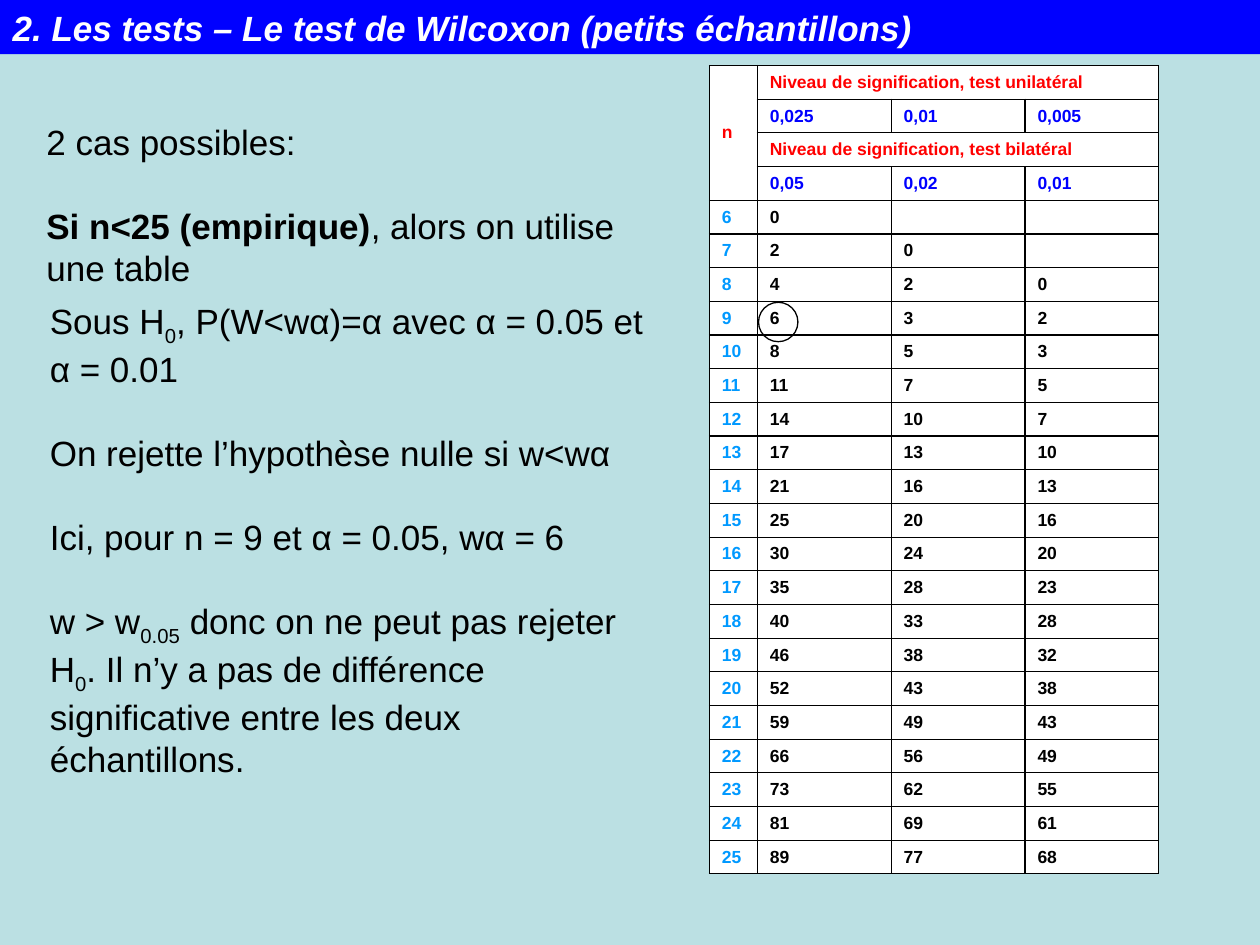
import dataclasses

import lxml.etree
import pptx
import pptx.dml.color
import pptx.enum.shapes
import pptx.enum.text
import pptx.oxml.ns
import pptx.util

Pt = pptx.util.Pt
RGB = pptx.dml.color.RGBColor.from_string
MIDDLE = pptx.enum.text.MSO_ANCHOR.MIDDLE


@dataclasses.dataclass(frozen=True)
class Theme:
    font: str = "Arial"
    background: str = "BBE0E3"
    banner: str = "0000FF"
    paper: str = "FFFFFF"
    ink: str = "000000"
    heading: str = "FF0000"
    level: str = "0000FF"
    sample_size: str = "0099FF"
    text_size: float = 20
    table_size: float = 10
    line_width: float = 0.75


THEME = Theme()

TITLE = "2. Les tests – Le test de Wilcoxon (petits échantillons)"

# Each paragraph is a list of (text, style) runs.
CASES = [
    [("2 cas possibles:", "")],
    [("Si n<25 (empirique)", "bold"), (", alors on utilise une table", "")],
]
DECISION = [
    [("Sous H", ""), ("0", "sub"), (", P(W<wα)=α avec α = 0.05 et α = 0.01", "")],
    [("On rejette l’hypothèse nulle si w<wα", "")],
    [("Ici, pour n = 9 et α = 0.05, wα = 6", "")],
    [("w > w", ""), ("0.05", "sub"), (" donc on ne peut pas rejeter H", ""), ("0", "sub"),
     (". Il n’y a pas de différence significative entre les deux échantillons.", "")],
]

TABLE_HEAD = [
    ["n", "Niveau de signification, test unilatéral", "", ""],
    ["", "0,025", "0,01", "0,005"],
    ["", "Niveau de signification, test bilatéral", "", ""],
    ["", "0,05", "0,02", "0,01"],
]
FIRST_N = 6
CRITICAL_VALUES = [
    ("0", "", ""), ("2", "0", ""), ("4", "2", "0"), ("6", "3", "2"), ("8", "5", "3"),
    ("11", "7", "5"), ("14", "10", "7"), ("17", "13", "10"), ("21", "16", "13"),
    ("25", "20", "16"), ("30", "24", "20"), ("35", "28", "23"), ("40", "33", "28"),
    ("46", "38", "32"), ("52", "43", "38"), ("59", "49", "43"), ("66", "56", "49"),
    ("73", "62", "55"), ("81", "69", "61"), ("89", "77", "68"),
]
TABLE_LEFT, TABLE_TOP = 405.36, 37.44
COLUMN_WIDTHS = [27.4, 76.5, 76.5, 76.5]
ROW_HEIGHT = 19.26


def format_run(run, size, color, **extra):
    values = {"name": THEME.font, "size": Pt(size), **extra}
    for attribute, value in values.items():
        setattr(run.font, attribute, value)
    run.font.color.rgb = RGB(color)


def add_title(slide):
    banner = slide.shapes.title
    for attribute, value in {"left": 0, "top": 0, "width": 720, "height": 31}.items():
        setattr(banner, attribute, Pt(value))
    banner.fill.solid()
    banner.fill.fore_color.rgb = RGB(THEME.banner)
    frame = banner.text_frame
    frame.auto_size = pptx.enum.text.MSO_AUTO_SIZE.NONE
    frame.vertical_anchor = MIDDLE
    paragraph = frame.paragraphs[0]
    paragraph.alignment = pptx.enum.text.PP_ALIGN.LEFT
    run = paragraph.add_run()
    run.text = TITLE
    format_run(run, THEME.text_size, THEME.paper, bold=True, italic=True)


def add_explanation(slide, left, top, width, height, paragraphs):
    """Add a text box whose paragraphs are one line of text apart."""
    box = slide.shapes.add_textbox(Pt(left), Pt(top), Pt(width), Pt(height))
    frame = box.text_frame
    frame.word_wrap = True
    for index, runs in enumerate(paragraphs):
        paragraph = frame.add_paragraph() if index else frame.paragraphs[0]
        paragraph.space_before = Pt(24 if index else 0)
        for text, style in runs:
            run = paragraph.add_run()
            run.text = text
            format_run(run, THEME.text_size, THEME.ink, bold=style == "bold")
            if style == "sub":
                run.font._element.set("baseline", "-25000")


def add_borders(cell):
    properties = cell._tc.get_or_add_tcPr()
    qn = pptx.oxml.ns.qn
    for edge in ("a:lnL", "a:lnR", "a:lnT", "a:lnB"):
        line = lxml.etree.SubElement(properties, qn(edge), w=str(Pt(THEME.line_width)))
        fill = lxml.etree.SubElement(line, qn("a:solidFill"))
        lxml.etree.SubElement(fill, qn("a:srgbClr"), val=THEME.ink)


def fill_cell(cell, text, color):
    add_borders(cell)
    cell.fill.solid()
    cell.fill.fore_color.rgb = RGB(THEME.paper)
    cell.vertical_anchor = MIDDLE
    paragraph = cell.text_frame.paragraphs[0]
    if text:
        run = paragraph.add_run()
        run.text = text
        format_run(run, THEME.table_size, color, bold=True)
    else:
        # Keeps an empty cell from growing its row.
        lxml.etree.SubElement(paragraph._p, pptx.oxml.ns.qn("a:endParaRPr"),
                              sz=str(int(THEME.table_size * 100)))


def cell_color(row, column):
    if row >= len(TABLE_HEAD):
        return THEME.ink if column else THEME.sample_size
    return THEME.level if row % 2 else THEME.heading


def add_critical_table(slide):
    body = [[str(n), *values] for n, values in enumerate(CRITICAL_VALUES, FIRST_N)]
    rows = TABLE_HEAD + body
    table = slide.shapes.add_table(
        len(rows), len(COLUMN_WIDTHS), Pt(TABLE_LEFT), Pt(TABLE_TOP),
        Pt(sum(COLUMN_WIDTHS)), Pt(ROW_HEIGHT * len(rows))).table
    table.first_row = table.horz_banding = False
    for column, width in zip(table.columns, COLUMN_WIDTHS):
        column.width = Pt(width)
    for r, texts in enumerate(rows):
        table.rows[r].height = Pt(ROW_HEIGHT)
        for c, text in enumerate(texts):
            fill_cell(table.cell(r, c), text, cell_color(r, c))
    table.cell(0, 0).merge(table.cell(3, 0))
    for heading_row in (0, 2):
        table.cell(heading_row, 1).merge(table.cell(heading_row, 3))


def circle_critical_value(slide, n):
    """Ring the first critical value in the row for sample size n."""
    row = len(TABLE_HEAD) + n - FIRST_N
    diameter = 22.5
    ring = slide.shapes.add_shape(
        pptx.enum.shapes.MSO_SHAPE.OVAL, Pt(TABLE_LEFT + COLUMN_WIDTHS[0] + 0.7),
        Pt(TABLE_TOP + row * ROW_HEIGHT + 0.5), Pt(diameter), Pt(diameter))
    ring.shadow.inherit = False
    ring.fill.background()
    ring.line.color.rgb = RGB(THEME.ink)
    ring.line.width = Pt(THEME.line_width)


def main():
    presentation = pptx.Presentation()
    presentation.slide_width, presentation.slide_height = Pt(720), Pt(540)
    slide = presentation.slides.add_slide(presentation.slide_layouts[5])
    slide.background.fill.solid()
    slide.background.fill.fore_color.rgb = RGB(THEME.background)
    add_title(slide)
    add_explanation(slide, 19.4, 65.5, 353, 103, CASES)
    add_explanation(slide, 21.4, 167.8, 363, 271, DECISION)
    add_critical_table(slide)
    circle_critical_value(slide, 9)
    presentation.save("out.pptx")


if __name__ == "__main__":
    main()
